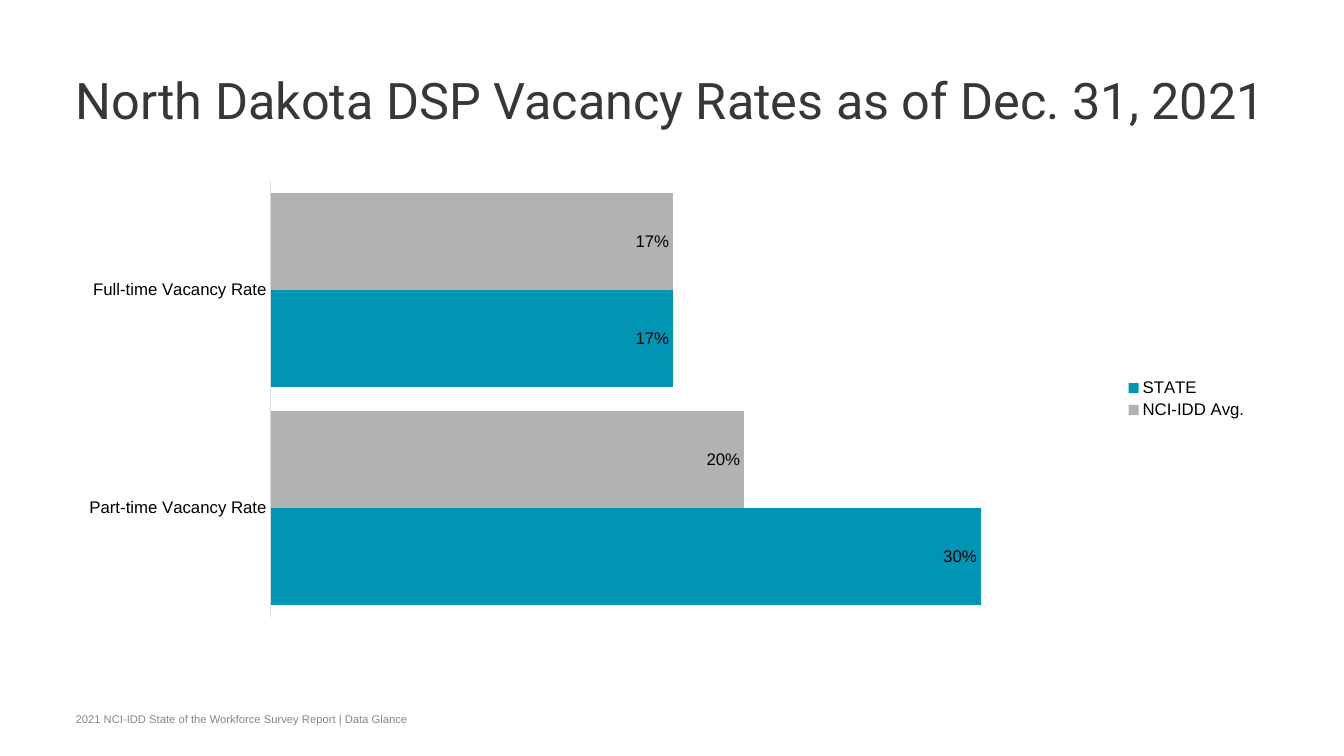
from pptx import Presentation
from pptx.chart.data import CategoryChartData
from pptx.dml.color import RGBColor
from pptx.enum.chart import XL_CHART_TYPE, XL_LABEL_POSITION, XL_LEGEND_POSITION, XL_TICK_MARK
from pptx.enum.text import MSO_ANCHOR
from pptx.util import Pt

HUES = {"title": "373737", "foot": "878787", "text": "000000",
        "axis": "D9D9D9", "avg": "B2B2B2", "state": "0094B5"}
RATES = [("NCI-IDD Avg.", (0.17, 0.2), "avg"), ("STATE", (0.17, 0.3), "state")]


def hue(name):
    return RGBColor.from_string(HUES[name])


def style(font, size, color, face="Arial"):
    font.size = Pt(size)
    font.name = face
    font.color.rgb = hue(color)


def add_text(slide, box, text, size, color, face="Arial", anchor=MSO_ANCHOR.TOP, space=1.0):
    frame = slide.shapes.add_textbox(*map(Pt, box)).text_frame
    frame.word_wrap = True
    frame.vertical_anchor = anchor
    frame.margin_left = frame.margin_right = frame.margin_top = frame.margin_bottom = 0
    para = frame.paragraphs[0]
    para.text = text
    para.line_spacing = space
    style(para.font, size, color, face)


def add_bars(slide, box):
    data = CategoryChartData(number_format="0%")
    data.categories = ["Full-time Vacancy Rate", "Part-time Vacancy Rate"]
    for name, vals, _ in RATES:
        data.add_series(name, vals)
    chart = slide.shapes.add_chart(XL_CHART_TYPE.BAR_CLUSTERED, *map(Pt, box), data).chart
    style(chart.font, 10, "text")
    chart.has_title = False

    chart.has_legend = True
    chart.legend.position = XL_LEGEND_POSITION.RIGHT
    chart.legend.include_in_layout = False
    style(chart.legend.font, 12, "text")

    cats = chart.category_axis
    cats.reverse_order = True
    cats.major_tick_mark = cats.minor_tick_mark = XL_TICK_MARK.NONE
    cats.format.line.color.rgb = hue("axis")
    cats.format.line.width = Pt(0.75)
    style(cats.tick_labels.font, 12, "text")

    vals = chart.value_axis
    vals.minimum_scale = 0
    vals.maximum_scale = 0.35
    vals.has_major_gridlines = False
    vals.visible = False

    plot = chart.plots[0]
    plot.gap_width = 25
    plot.overlap = 0
    plot.vary_by_categories = False
    for bar, (_, _, color) in zip(plot.series, RATES):
        bar.format.fill.solid()
        bar.format.fill.fore_color.rgb = hue(color)
        tags = bar.data_labels
        tags.show_value = True
        tags.position = XL_LABEL_POSITION.INSIDE_END
        tags.number_format = "0%"
        tags.number_format_is_linked = False
        style(tags.font, 12, "text")


def main():
    deck = Presentation()
    deck.slide_width, deck.slide_height = Pt(960), Pt(540)
    slide = deck.slides.add_slide(deck.slide_layouts[6])
    add_text(slide, (54, 54, 852, 72), "North Dakota DSP Vacancy Rates as of Dec. 31, 2021",
             36, "title", "Roboto", space=0.9)
    add_bars(slide, (46.8, 123.1, 852, 324))
    add_text(slide, (54, 507.6, 566, 10.8),
             "2021 NCI-IDD State of the Workforce Survey Report | Data Glance",
             8, "foot", anchor=MSO_ANCHOR.BOTTOM)
    deck.save("out.pptx")


if __name__ == "__main__":
    main()
